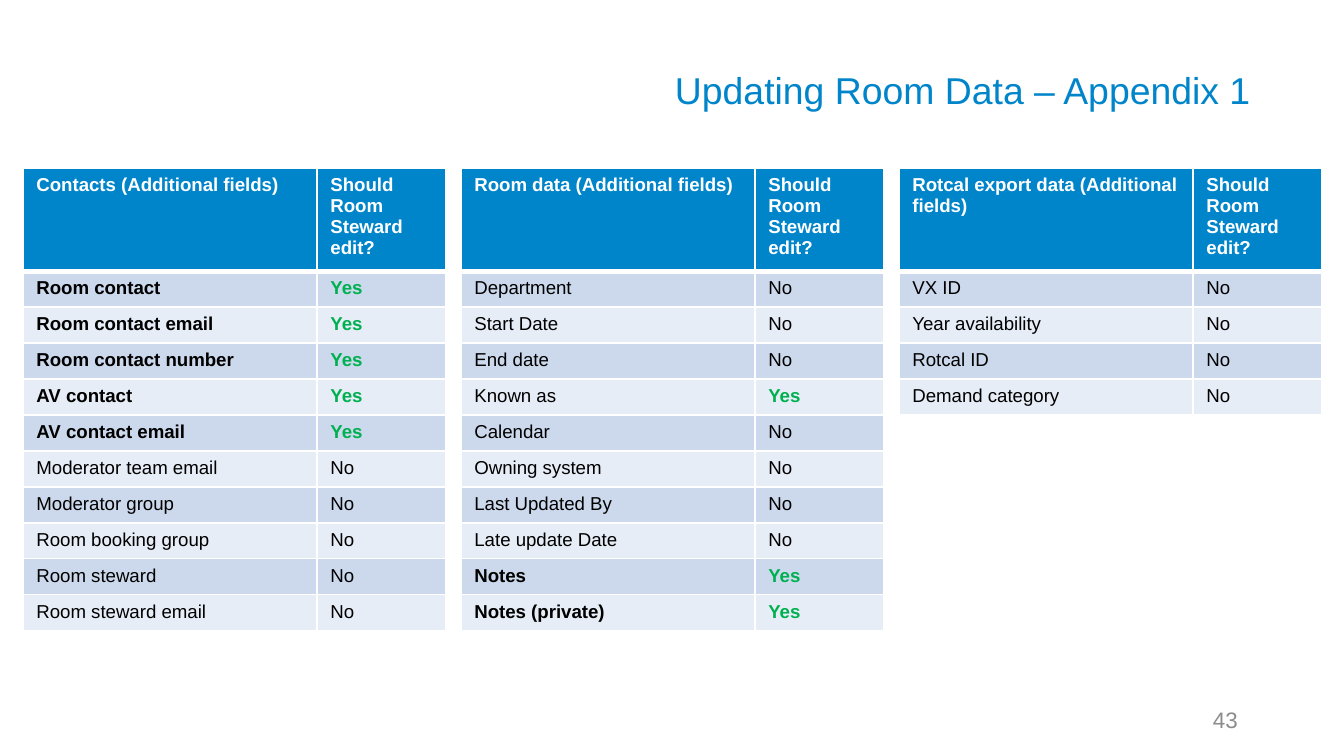
"""Build the room data appendix slide with its three field tables."""
from dataclasses import dataclass

from lxml.etree import SubElement
from pptx import Presentation
from pptx.dml.color import RGBColor
from pptx.enum.text import MSO_ANCHOR as Anchor, MSO_AUTO_SIZE as AutoSize, PP_ALIGN as Align
from pptx.oxml.ns import qn
from pptx.util import Pt

EMU_PER_PX = 914400 / 134.4


def px(length):
    return round(length * EMU_PER_PX)


@dataclass(frozen=True)
class Theme:
    font: str = "Arial"
    accent: str = "0085CA"
    white: str = "FFFFFF"
    text: str = "000000"
    editable: str = "00B050"
    muted: str = "8C8C8C"
    bands: tuple = ("CCD9EC", "E7EDF6")
    title_size: int = 20
    number_size: int = 12
    table_size: int = 10
    thin_line: int = 1
    thick_line: int = 3


class SlideBuilder:
    def __init__(self, slide, theme):
        self.slide = slide
        self.theme = theme

    def add_text(self, frame, text, size, color, bold=False, align=Align.LEFT):
        frame.word_wrap = True
        paragraph = frame.paragraphs[0]
        paragraph.alignment = align
        run = paragraph.add_run()
        run.text = text
        run.font.name = self.theme.font
        run.font.size = Pt(size)
        run.font.bold = bold
        run.font.color.rgb = RGBColor.from_string(color)

    def title(self, text, left, top, width, height):
        shape = self.slide.shapes.title
        shape.left, shape.top, shape.width, shape.height = map(px, (left, top, width, height))
        frame = shape.text_frame
        frame.auto_size = AutoSize.NONE
        frame.vertical_anchor = Anchor.MIDDLE
        frame.margin_left = frame.margin_right = frame.margin_bottom = 0
        frame.margin_top = Pt(3.6)
        self.add_text(frame, text, self.theme.title_size, self.theme.accent, align=Align.RIGHT)

    def page_number(self, text, left, top, width, height):
        shape = self.slide.shapes.add_textbox(*map(px, (left, top, width, height)))
        shape.text_frame.vertical_anchor = Anchor.MIDDLE
        self.add_text(shape.text_frame, text, self.theme.number_size, self.theme.muted,
                      align=Align.RIGHT)

    def cell(self, cell, text, fill, color, bold, top_line, bottom_line):
        properties = cell._tc.get_or_add_tcPr()
        thin = self.theme.thin_line
        for side, width in zip("LRTB", (thin, thin, top_line, bottom_line)):
            line = SubElement(properties, qn(f"a:ln{side}"), w=str(Pt(width)))
            solid = SubElement(line, qn("a:solidFill"))
            SubElement(solid, qn("a:srgbClr"), val=self.theme.white)
        cell.fill.solid()
        cell.fill.fore_color.rgb = RGBColor.from_string(fill)
        self.add_text(cell.text_frame, text, self.theme.table_size, color, bold)

    def field_table(self, heading, fields, left, top, columns, header_height, body_height):
        theme = self.theme
        shape = self.slide.shapes.add_table(
            len(fields) + 1, len(columns), px(left), px(top),
            px(sum(columns)), px(header_height + body_height))
        table = shape.table
        for column, width in zip(table.columns, columns):
            column.width = px(width)
        for row in table.rows:
            row.height = px(body_height / len(fields))
        table.rows[0].height = px(header_height)
        for index, text in enumerate((heading, "Should Room Steward edit?")):
            self.cell(table.cell(0, index), text, theme.accent, theme.white, True,
                      theme.thin_line, theme.thick_line)
        for index, (field, answer) in enumerate(fields, 1):
            fill = theme.bands[(index - 1) % 2]
            editable = answer == "Yes"
            top_line = theme.thick_line if index == 1 else theme.thin_line
            answer_color = theme.editable if editable else theme.text
            field_bold = editable and field != "Known as"
            self.cell(table.cell(index, 0), field, fill, theme.text, field_bold,
                      top_line, theme.thin_line)
            self.cell(table.cell(index, 1), answer, fill, answer_color, editable,
                      top_line, theme.thin_line)


CONTACTS = [
    ("Room contact", "Yes"),
    ("Room contact email", "Yes"),
    ("Room contact number", "Yes"),
    ("AV contact", "Yes"),
    ("AV contact email", "Yes"),
    ("Moderator team email", "No"),
    ("Moderator group", "No"),
    ("Room booking group", "No"),
    ("Room steward", "No"),
    ("Room steward email", "No"),
]
ROOM_DATA = [
    ("Department", "No"),
    ("Start Date", "No"),
    ("End date", "No"),
    ("Known as", "Yes"),
    ("Calendar", "No"),
    ("Owning system", "No"),
    ("Last Updated By", "No"),
    ("Late update Date", "No"),
    ("Notes", "Yes"),
    ("Notes (private)", "Yes"),
]
EXPORT_DATA = [
    ("VX ID", "No"),
    ("Year availability", "No"),
    ("Rotcal ID", "No"),
    ("Demand category", "No"),
]
TABLES = [
    ("Contacts (Additional fields)", CONTACTS, 350),
    ("Room data (Additional fields)", ROOM_DATA, 343),
    ("Rotcal export data (Additional fields)", EXPORT_DATA, 137),
]


def main():
    presentation = Presentation()
    presentation.slide_width, presentation.slide_height = px(1344), px(756)
    slide = presentation.slides.add_slide(presentation.slide_layouts.get_by_name("Title Only"))
    builder = SlideBuilder(slide, Theme())
    builder.title("Updating Room Data – Appendix 1", 478, 58, 773, 56)
    builder.page_number("43", 949, 700, 302, 40)
    for index, (heading, fields, body_height) in enumerate(TABLES):
        builder.field_table(heading, fields, left=23 + 438 * index, top=168,
                            columns=(294, 129), header_height=96, body_height=body_height)
    presentation.save("out.pptx")


if __name__ == "__main__":
    main()
